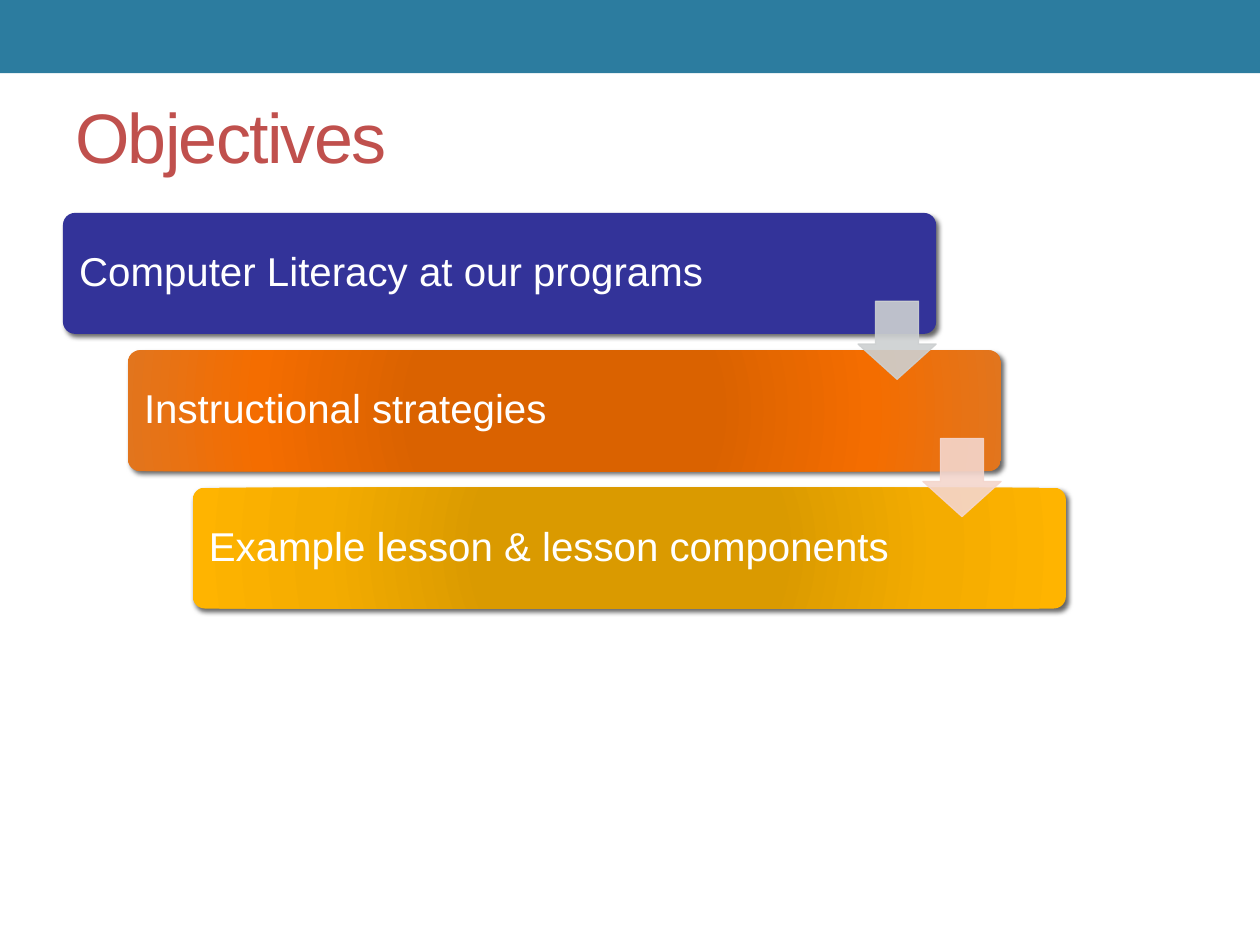
from pptx import Presentation
from pptx.dml.color import RGBColor
from pptx.enum.shapes import MSO_SHAPE
from pptx.enum.text import MSO_ANCHOR
from pptx.oxml import parse_xml
from pptx.oxml.ns import nsdecls, qn
from pptx.util import Inches, Pt

RECT = MSO_SHAPE.RECTANGLE
ROUND = MSO_SHAPE.ROUNDED_RECTANGLE
DOWN = MSO_SHAPE.DOWN_ARROW
MIDDLE = MSO_ANCHOR.MIDDLE

STEPS = [
    ("Computer Literacy at our programs", ["333399"]),
    ("Instructional strategies", ["DA6200", "DA6200", "F46D00", "E2751D"]),
    ("Example lesson & lesson components",
     ["DA9A00", "DA9A00", "F4AC00", "FFB400"]),
]
STOPS = [0, 34, 70, 100]
ARROWS = ["CDD0D1", "F4D6CD"]
STEP_X, STEP_Y = 0.515, 1.09


def rgb(color):
    return RGBColor.from_string(color)


def add_shape(slide, kind, box, adjust=()):
    shape = slide.shapes.add_shape(kind, *map(Inches, box))
    for i, value in enumerate(adjust):
        shape.adjustments[i] = value
    shape.shadow.inherit = False
    shape.line.fill.background()
    return shape


def add_text(slide, box, text, size, color):
    frame = slide.shapes.add_textbox(*map(Inches, box)).text_frame
    frame.word_wrap = True
    frame.vertical_anchor = MIDDLE
    frame.margin_left = frame.margin_right = Inches(0.1)
    frame.margin_top = frame.margin_bottom = Inches(0.1)
    para = frame.paragraphs[0]
    para.line_spacing = 0.9
    run = para.add_run()
    run.text = text
    run.font.name = "Arial"
    run.font.size = Pt(size)
    run.font.color.rgb = rgb(color)
    return run


def fill_solid(shape, color):
    shape.fill.solid()
    shape.fill.fore_color.rgb = rgb(color)


def fill_radial(shape, colors):
    stops = "".join(
        f'<a:gs pos="{pos * 1000}"><a:srgbClr val="{color}"/></a:gs>'
        for pos, color in zip(STOPS, colors))
    grad = parse_xml(
        f'<a:gradFill {nsdecls("a")} rotWithShape="1"><a:gsLst>{stops}</a:gsLst>'
        '<a:path path="circle"><a:fillToRect l="100000" t="100000" '
        'r="100000" b="100000"/></a:path></a:gradFill>')
    shape.element.spPr.find(qn("a:prstGeom")).addnext(grad)


def cast_shadow(shape):
    shape.element.spPr.find(qn("a:effectLst")).append(parse_xml(
        f'<a:outerShdw {nsdecls("a")} blurRad="{Pt(3)}" dist="{Pt(2)}" '
        f'dir="{45 * 60000}" rotWithShape="0"><a:srgbClr val="000000">'
        '<a:alpha val="60000"/></a:srgbClr></a:outerShdw>'))


def add_header(slide, left, top, width, height):
    fill_solid(add_shape(slide, RECT, (left, top, width, height)), "2C7C9F")


def add_title(slide, left, top, width, height):
    run = add_text(slide, (left, top, width, height), "Objectives", 40, "C0504D")
    run.font._element.set("spc", "-100")


def add_step(slide, left, top, width, height, text, colors):
    bar = add_shape(slide, ROUND, (left, top, width, height), [0.1])
    if len(colors) == 1:
        fill_solid(bar, colors[0])
    else:
        fill_radial(bar, colors)
    cast_shadow(bar)
    label = (left + 0.03, top + 0.03, width - 1.2, height - 0.06)
    add_text(slide, label, text, 23, "FFFFFF")


def add_arrow(slide, left, top, size, color):
    arrow = add_shape(slide, DOWN, (left, top, size, size), [0.55, 0.45])
    fill_solid(arrow, color)
    arrow.line.color.rgb = rgb(color)
    arrow.line.width = Pt(0.75)
    for tint in arrow.element.spPr.iter(qn("a:srgbClr")):
        tint.append(parse_xml(f'<a:alpha {nsdecls("a")} val="90000"/>'))


def add_stairs(slide, left, top, width, height):
    """Bars stepping down to the right, with arrows between them."""
    size = 0.62
    for i, (text, colors) in enumerate(STEPS):
        add_step(slide, left + i * STEP_X, top + i * STEP_Y, width, height,
                 text, colors)
    for i, color in enumerate(ARROWS):
        add_arrow(slide, left + width - size + i * STEP_X,
                  top + 0.7 + i * STEP_Y, size, color)


def main():
    deck = Presentation()
    deck.slide_width, deck.slide_height = Inches(10), Inches(7.5)
    slide = deck.slides.add_slide(deck.slide_layouts[6])
    add_header(slide, 0, 0, 10, 0.58)
    add_title(slide, 0.5, 0.58, 9, 1.08)
    add_stairs(slide, 0.5, 1.69, 6.93, 0.96)
    deck.save("out.pptx")


if __name__ == "__main__":
    main()
